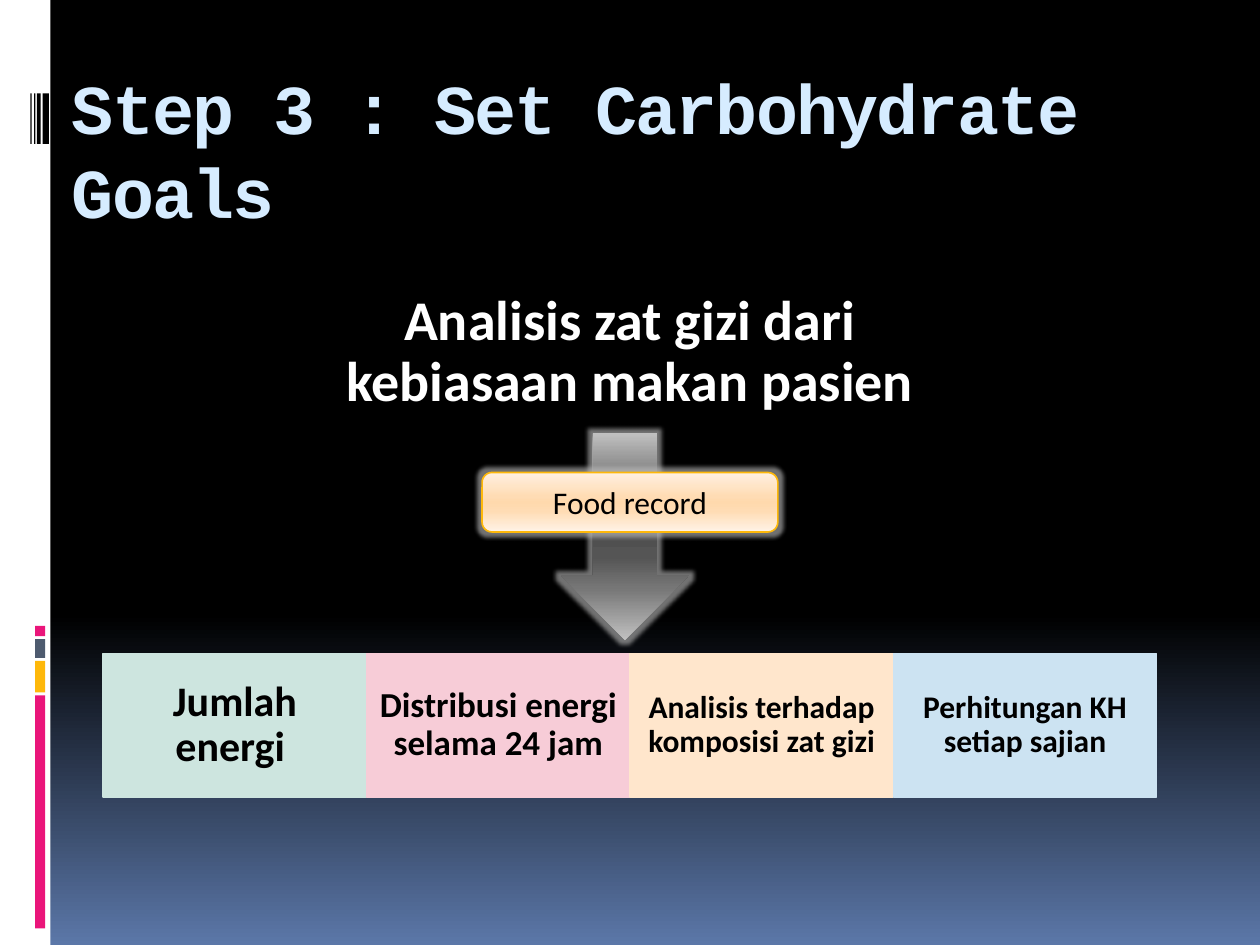
"""Build the carbohydrate goals slide."""
from dataclasses import dataclass

from lxml.etree import SubElement
from pptx import Presentation
from pptx.dml.color import RGBColor
from pptx.enum.shapes import MSO_SHAPE
from pptx.enum.text import MSO_ANCHOR, PP_ALIGN
from pptx.oxml.ns import qn
from pptx.util import Pt


@dataclass(frozen=True)
class Theme:
    """Colours, fonts and type sizes of the slide."""
    black: str = "000000"
    white: str = "FFFFFF"
    pink: str = "EA157A"
    amber: str = "FEB80A"
    slate: str = "4E5B6F"
    heading: str = "D6ECFF"
    glow: str = "C0C0C0"
    mint: str = "CDE5DF"
    rose: str = "F7CCD7"
    peach: str = "FFE6CC"
    sky: str = "CCE3F2"
    backdrop: tuple = ((0, "000000"), (65, "000000"), (100, "5B77A8"))
    steel: tuple = ((0, "C0C0C0"), (25, "707070"), (40, "555555"), (50, "505050"),
                    (60, "555555"), (75, "767676"), (100, "C0C0C0"))
    cream: tuple = ((0, "FFF0E1"), (40, "FFDCB4"), (50, "FFD9AD"),
                    (65, "FFDCB4"), (100, "FFF3E7"))
    body_font: str = "Calibri"
    title_font: str = "Courier New"
    title_size: int = 40
    lead_size: int = 32
    large_size: int = 24
    medium_size: int = 20
    small_size: int = 18


THEME = Theme()


def add_colour(parent, colour, alpha=None):
    """Append an RGB colour element, optionally translucent."""
    rgb = SubElement(parent, qn("a:srgbClr"), val=colour)
    if alpha is not None:
        SubElement(rgb, qn("a:alpha"), val=str(alpha * 1000))


def fill_gradient(fill, owner, stops):
    """Give the owner's fill a top-to-bottom gradient."""
    fill.gradient()
    fill.gradient_angle = 270
    stop_list = next(owner.iter(qn("a:gsLst")))
    for default_stop in list(stop_list):
        stop_list.remove(default_stop)
    for position, colour in stops:
        add_colour(SubElement(stop_list, qn("a:gs"), pos=str(position * 1000)), colour)


def add_glow(shape, radius=5, alpha=60):
    """Surround a shape with a soft glow."""
    effects = shape._element.spPr.find(qn("a:effectLst"))
    glow = SubElement(effects, qn("a:glow"), rad=str(Pt(radius)))
    add_colour(glow, THEME.glow, alpha)


def add_block(slide, box, fill, kind=MSO_SHAPE.RECTANGLE, outline=None):
    """Add a preset shape with a solid or gradient fill."""
    block = slide.shapes.add_shape(kind, *map(Pt, box))
    block.shadow.inherit = False
    if isinstance(fill, str):
        block.fill.solid()
        block.fill.fore_color.rgb = RGBColor.from_string(fill)
    else:
        fill_gradient(block.fill, block._element, fill)
    if outline:
        block.line.color.rgb = RGBColor.from_string(outline)
        block.line.width = Pt(0.94)
    else:
        block.line.fill.background()
    return block


def write(frame, text, *, size, colour=THEME.black, font=THEME.body_font, bold=True,
          align=PP_ALIGN.CENTER, anchor=MSO_ANCHOR.MIDDLE, line_spacing=0.9,
          insets=(7.2, 3.6), tracking=0):
    """Write one formatted paragraph into a text frame."""
    frame.word_wrap = True
    frame.vertical_anchor = anchor
    frame.margin_left = frame.margin_right = Pt(insets[0])
    frame.margin_top = frame.margin_bottom = Pt(insets[1])
    paragraph = frame.paragraphs[0]
    paragraph.alignment = align
    paragraph.line_spacing = line_spacing
    run = paragraph.add_run()
    run.text = text
    run.font.name = font
    run.font.size = Pt(size)
    run.font.bold = bold
    run.font.color.rgb = RGBColor.from_string(colour)
    if tracking:
        run.font._element.set("spc", str(tracking * 100))


def add_label(slide, box, text, **style):
    """Add a text box holding one paragraph."""
    write(slide.shapes.add_textbox(*map(Pt, box)).text_frame, text, **style)


def add_side_strip(slide):
    """Draw the white edge with its colour bars and barcode."""
    add_block(slide, (0, 0, 28.8, 540), THEME.white)
    bars = ((397.4, 133.2, THEME.pink), (377.7, 18, THEME.amber),
            (365.2, 10.8, THEME.slate), (357.7, 5.8, THEME.pink))
    for top, height, colour in bars:
        add_block(slide, (20, top, 5.8, height), colour)
    for left, width in ((24.4, 3.6), (21.1, 2.2), (19.5, 0.7), (17.4, 0.7)):
        add_block(slide, (left, 53.4, width, 28.8), THEME.black)


def add_results(slide):
    """Draw the row of four equal result cells."""
    results = (("Jumlah energi ", THEME.large_size, THEME.mint),
               ("Distribusi energi selama 24 jam", THEME.medium_size, THEME.rose),
               ("Analisis terhadap komposisi zat gizi", THEME.small_size, THEME.peach),
               ("Perhitungan KH setiap sajian", THEME.small_size, THEME.sky))
    width = 150.5
    for column, (text, size, colour) in enumerate(results):
        box = (59 + column * width, 373.5, width, 82)
        cell = add_block(slide, box, colour, outline=colour)
        write(cell.text_frame, text, size=size, insets=(7.2, 1.5))


def add_food_record(slide):
    """Draw the arrow and the method label across it."""
    arrow = add_block(slide, (320.4, 247.5, 73.4, 118.1), THEME.steel, MSO_SHAPE.DOWN_ARROW)
    method = add_block(slide, (275.5, 270, 169, 34), THEME.cream,
                       MSO_SHAPE.ROUNDED_RECTANGLE, THEME.amber)
    for shape in (arrow, method):
        add_glow(shape)
    write(method.text_frame, "Food record", size=THEME.small_size, bold=False, line_spacing=1.0)


def main():
    """Assemble and save the slide."""
    deck = Presentation()
    deck.slide_width, deck.slide_height = Pt(720), Pt(540)
    slide = deck.slides.add_slide(deck.slide_layouts[6])
    fill_gradient(slide.background.fill, slide._element, THEME.backdrop)
    add_side_strip(slide)
    add_results(slide)
    add_label(slide, (34, 28, 686, 72), "Step 3 : Set Carbohydrate Goals",
              size=THEME.title_size, colour=THEME.heading, font=THEME.title_font,
              align=PP_ALIGN.LEFT, anchor=MSO_ANCHOR.TOP, line_spacing=Pt(48),
              insets=(7.2, 9), tracking=-1)
    add_label(slide, (180, 163.5, 360, 77), "Analisis zat gizi dari kebiasaan makan pasien",
              size=THEME.lead_size, colour=THEME.white, anchor=MSO_ANCHOR.TOP)
    add_food_record(slide)
    deck.save("out.pptx")


if __name__ == "__main__":
    main()
